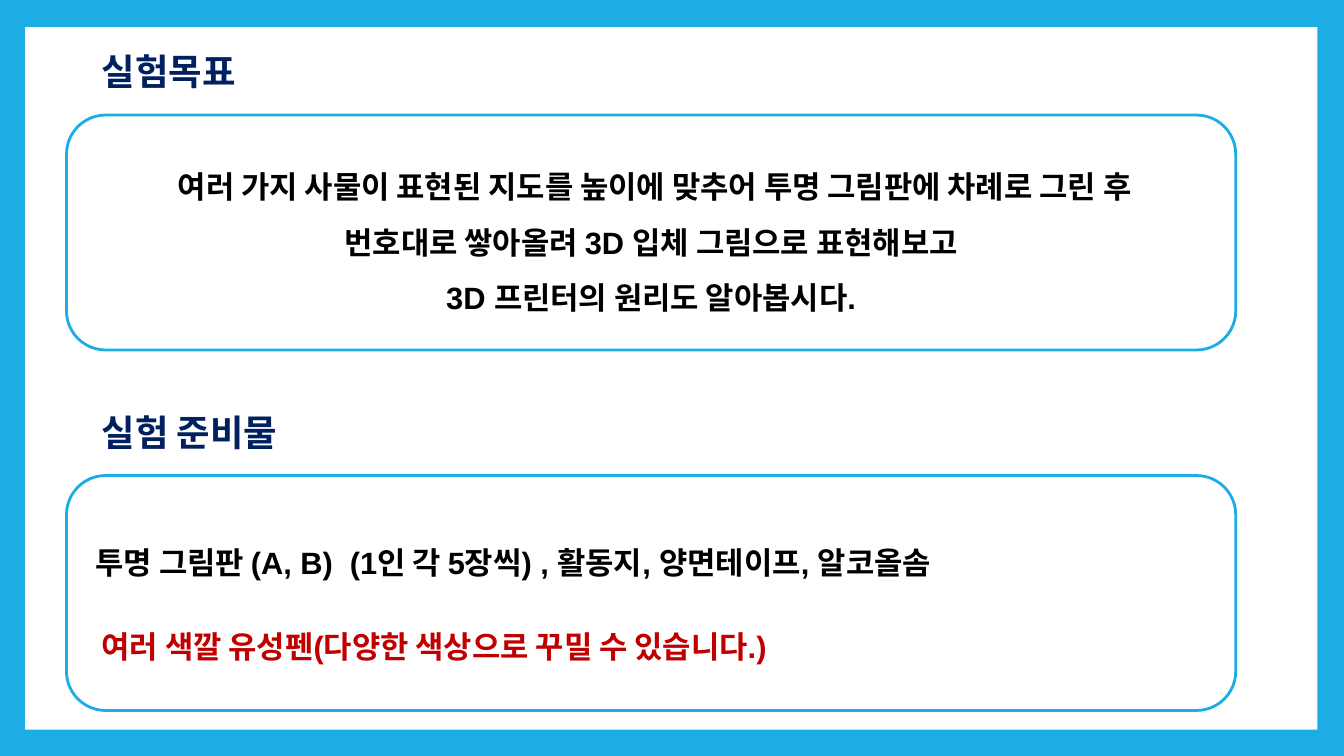
import pptx
import pptx.util
import pptx.dml.color
import pptx.enum.shapes
import pptx.enum.text
from dataclasses import dataclass

Pt = pptx.util.Pt
Align = pptx.enum.text.PP_ALIGN
Anchor = pptx.enum.text.MSO_ANCHOR
Preset = pptx.enum.shapes.MSO_SHAPE


@dataclass(frozen=True)
class Theme:
    frame: str = "1CADE4"
    paper: str = "FFFFFF"
    heading: str = "002060"
    body: str = "000000"
    accent: str = "C00000"
    heading_font: str = "Calibri"
    body_font: str = "Arial"
    heading_size: int = 26
    body_size: int = 22
    outline: int = 2


def rgb(value):
    return pptx.dml.color.RGBColor.from_string(value)


class LessonSlide:
    def __init__(self, slide, theme):
        self.slide = slide
        self.theme = theme
        slide.background.fill.solid()
        slide.background.fill.fore_color.rgb = rgb(theme.frame)

    def set_text(self, frame, lines, font, size, color, spacing=1.0, align=Align.LEFT):
        frame.word_wrap = True
        frame.text = "\n".join(lines)
        for paragraph in frame.paragraphs:
            paragraph.alignment = align
            paragraph.line_spacing = spacing
            paragraph.font.name = font
            paragraph.font.size = Pt(size)
            paragraph.font.bold = True
            paragraph.font.color.rgb = rgb(color)

    def panel(self, preset, left, top, width, height, outlined=True):
        panel = self.slide.shapes.add_shape(
            preset, Pt(left), Pt(top), Pt(width), Pt(height))
        panel.shadow.inherit = False
        panel.fill.solid()
        panel.fill.fore_color.rgb = rgb(self.theme.paper)
        if outlined:
            panel.line.color.rgb = rgb(self.theme.frame)
            panel.line.width = Pt(self.theme.outline)
        else:
            panel.line.fill.background()
        return panel

    def paper(self, left, top, width, height):
        paper = self.panel(Preset.RECTANGLE, left, top, width, height, outlined=False)
        # The paper lies behind the title placeholder
        paper.element.getparent().insert(2, paper.element)

    def text_box(self, left, top, width, height):
        return self.slide.shapes.add_textbox(Pt(left), Pt(top), Pt(width), Pt(height))

    def heading(self, holder, text, left, top, width, height):
        holder.left, holder.top = Pt(left), Pt(top)
        holder.width, holder.height = Pt(width), Pt(height)
        frame = holder.text_frame
        frame.auto_size = pptx.enum.text.MSO_AUTO_SIZE.NONE
        frame.vertical_anchor = Anchor.TOP
        frame.margin_left = frame.margin_right = Pt(7.2)
        frame.margin_top = frame.margin_bottom = Pt(7.2)
        self.set_text(frame, [text], self.theme.heading_font,
                      self.theme.heading_size, self.theme.heading)

    def body(self, holder, lines, color, spacing, align=Align.LEFT):
        self.set_text(holder.text_frame, lines, self.theme.body_font,
                      self.theme.body_size, color, spacing, align)


def main():
    theme = Theme()
    deck = pptx.Presentation()
    deck.slide_width, deck.slide_height = Pt(960), Pt(540)
    slide = deck.slides.add_slide(deck.slide_layouts[5])
    lesson = LessonSlide(slide, theme)
    lesson.paper(18, 19.4, 923, 501.8)

    # Two sections, each a heading above a rounded panel
    section_step = 257.5
    headings = [
        (slide.shapes.title, "실험목표"),
        (lesson.text_box(0, 0, 10, 10), "실험 준비물"),
    ]
    panels = []
    for index, (holder, text) in enumerate(headings):
        offset = index * section_step
        lesson.heading(holder, text, 65.5, 28 + offset, 166, 34.6)
        panels.append(lesson.panel(
            Preset.ROUNDED_RECTANGLE, 47.5, 82.2 + offset, 835.2, 167.8))

    # Goal of the experiment
    goal = panels[0]
    goal.text_frame.vertical_anchor = Anchor.MIDDLE
    lesson.body(goal, [
        " 여러 가지 사물이 표현된 지도를 높이에 맞추어 투명 그림판에 차례로 그린 후",
        "번호대로 쌓아올려 3D 입체 그림으로 표현해보고",
        "3D 프린터의 원리도 알아봅시다.",
    ], theme.body, 1.5, Align.CENTER)

    # Materials
    pens = lesson.text_box(65.5, 418.3, 830, 51.8)
    lesson.body(pens, ["여러 색깔 유성펜(다양한 색상으로 꾸밀 수 있습니다.)"], theme.accent, 2.0)
    supplies = lesson.text_box(61.2, 371.5, 830, 41.8)
    lesson.body(supplies, [
        "투명 그림판 (A, B)  (1인 각 5장씩) , 활동지, 양면테이프, 알코올솜",
    ], theme.body, 1.5)

    deck.save("out.pptx")


if __name__ == "__main__":
    main()
